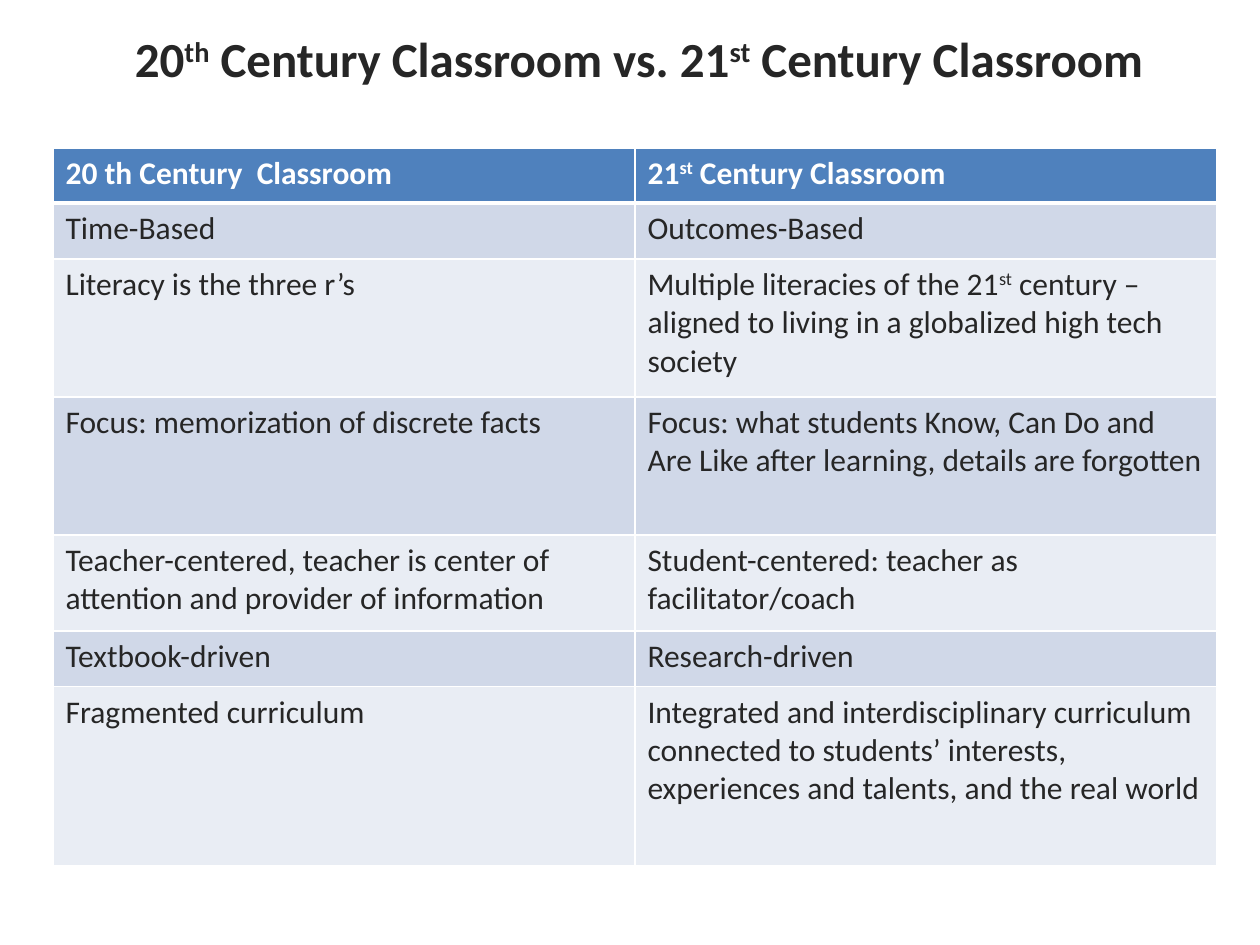
from lxml import etree
from pptx import Presentation
from pptx import util as u
from pptx.dml.color import RGBColor
from pptx.enum import text
from pptx.oxml import ns

SCALE = 914400 // 126
FONT = "Calibri"
INK = "262626"
WHITE = "FFFFFF"
HEADER_FILL = "4F81BD"
BAND_FILLS = ("D0D8E8", "E9EDF4")
TITLE = "20^th^ Century Classroom vs. 21^st^ Century Classroom"
ROWS = [
    (55, "20 th Century  Classroom", "21^st^ Century Classroom"),
    (56, "Time-Based", "Outcomes-Based"),
    (138, "Literacy is the three r’s",
     "Multiple literacies of the 21^st^ century – aligned to living in a globalized high tech society"),
    (138, "Focus: memorization of discrete facts",
     "Focus: what students Know, Can Do and Are Like after learning, details are forgotten"),
    (96, "Teacher-centered, teacher is center of attention and provider of information",
     "Student-centered: teacher as facilitator/coach"),
    (56, "Textbook-driven", "Research-driven"),
    (179, "Fragmented curriculum",
     "Integrated and interdisciplinary curriculum connected to students’ interests, "
     "experiences and talents, and the real world"),
]


def px(value):
    return u.Emu(value * SCALE)


def color(value):
    return RGBColor.from_string(value)


def write(frame, content, size=18, ink=INK, bold=False, align=text.PP_ALIGN.LEFT):
    frame.word_wrap = True
    paragraph = frame.paragraphs[0]
    paragraph.alignment = align
    for index, part in enumerate(content.split("^")):
        run = paragraph.add_run()
        run.text = part
        run.font.name = FONT
        run.font.size = u.Pt(size)
        run.font.bold = bold
        run.font.color.rgb = color(ink)
        if index % 2:
            run.font._element.set("baseline", "30000")


def set_borders(cell, **widths):
    properties = cell._tc.get_or_add_tcPr()
    for index, side in enumerate("LRTB"):
        line = etree.Element(ns.qn(f"a:ln{side}"), w=str(u.Pt(widths.get(side, 1))))
        fill = etree.SubElement(line, ns.qn("a:solidFill"))
        etree.SubElement(fill, ns.qn("a:srgbClr"), val=WHITE)
        properties.insert(index, line)


def add_title(slide):
    box = slide.shapes.add_textbox(px(60), px(10), px(1158), px(95))
    box.text_frame.vertical_anchor = text.MSO_ANCHOR.MIDDLE
    write(box.text_frame, TITLE, size=28, bold=True, align=text.PP_ALIGN.CENTER)


def add_comparison(slide):
    height = sum(row[0] for row in ROWS)
    frame = slide.shapes.add_table(len(ROWS), 2, px(53), px(148), px(1164), px(height))
    table = frame.table
    for index, (row_height, *contents) in enumerate(ROWS):
        table.rows[index].height = px(row_height)
        header = index == 0
        for column, content in enumerate(contents):
            cell = table.cell(index, column)
            cell.fill.solid()
            cell.fill.fore_color.rgb = color(HEADER_FILL if header else BAND_FILLS[(index - 1) % 2])
            set_borders(cell, T=3 if index == 1 else 1, B=3 if header else 1)
            write(cell.text_frame, content, ink=WHITE if header else INK, bold=header)


def main():
    presentation = Presentation()
    presentation.slide_width = px(1260)
    presentation.slide_height = px(945)
    slide = presentation.slides.add_slide(presentation.slide_layouts[6])
    add_title(slide)
    add_comparison(slide)
    presentation.save("out.pptx")


if __name__ == "__main__":
    main()
